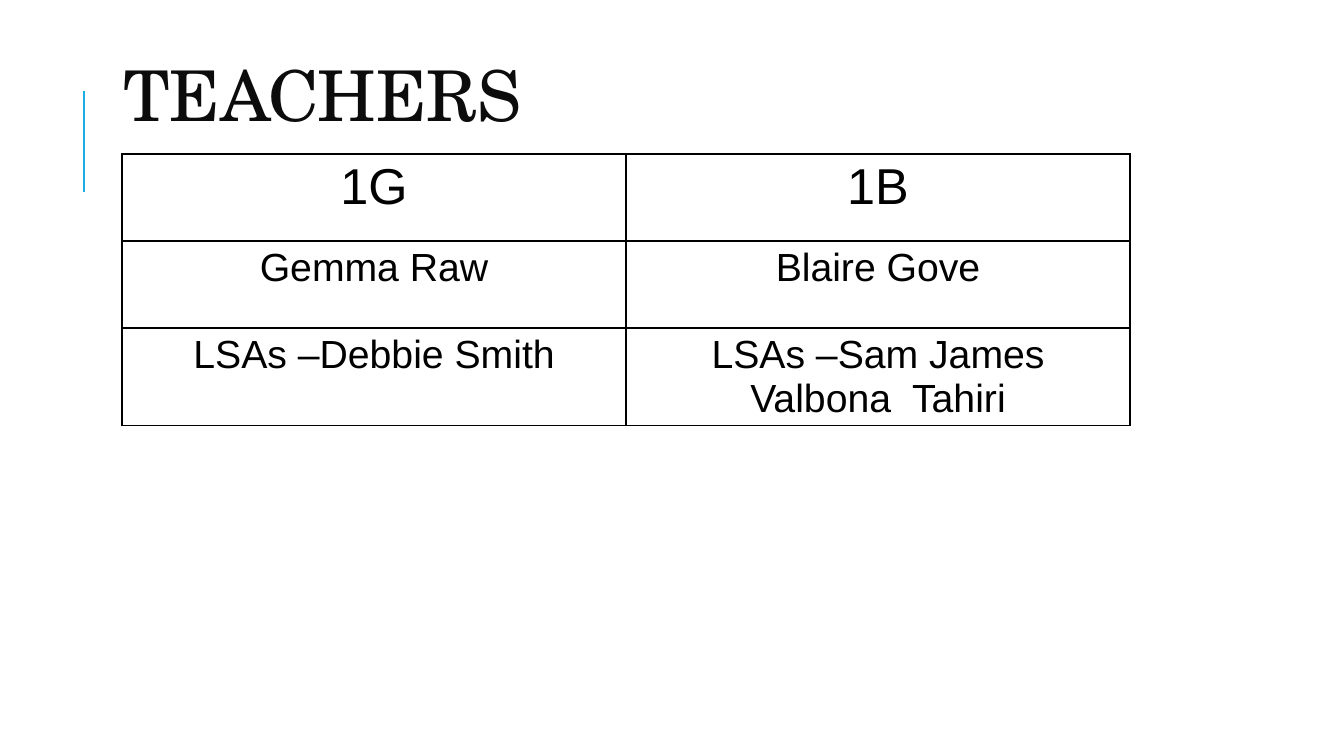
import pptx
import pptx.dml.color
import pptx.enum.shapes
import pptx.enum.text
import pptx.oxml
import pptx.oxml.ns
import pptx.util
from lxml import etree

PX = 12192000 / 1344
BLACK = pptx.dml.color.RGBColor(0x00, 0x00, 0x00)
TITLE_INK = pptx.dml.color.RGBColor(0x0C, 0x0C, 0x0C)
ACCENT_BLUE = pptx.dml.color.RGBColor(0x1C, 0xAD, 0xE4)

COLUMN_WIDTH = 504
ROW_HEIGHT = 87
LAST_ROW_HEIGHT = 97
TEACHERS = [
    ("1G", "1B"),
    ("Gemma Raw", "Blaire Gove"),
    ("LSAs –Debbie Smith", "LSAs –Sam James\nValbona  Tahiri"),
]


def px(length):
    return pptx.util.Emu(round(length * PX))


def format_text(paragraph, alignment, font_values):
    paragraph.alignment = alignment
    for run in paragraph.runs:
        run.font.color.rgb = font_values["color"]
        for name in ("name", "size", "bold"):
            setattr(run.font, name, font_values[name])


presentation = pptx.Presentation()
presentation.slide_width = px(1344)
presentation.slide_height = px(756)
slide = presentation.slides.add_slide(presentation.slide_layouts[5])

accent = slide.shapes.add_connector(
    pptx.enum.shapes.MSO_CONNECTOR.STRAIGHT, px(84), px(192), px(84), px(91)
)
accent.line.color.rgb = ACCENT_BLUE
accent.line.width = pptx.util.Pt(1.5)
etree.SubElement(accent._element.spPr, pptx.oxml.ns.qn("a:effectLst"))

title = slide.shapes.title
title_box = {"left": 113, "top": 19, "width": 1072, "height": 165}
for name, length in title_box.items():
    setattr(title, name, px(length))
title.text_frame.text = "TEACHERS"
title.text_frame.vertical_anchor = pptx.enum.text.MSO_ANCHOR.MIDDLE
title.text_frame.auto_size = pptx.enum.text.MSO_AUTO_SIZE.NONE
title_paragraph = title.text_frame.paragraphs[0]
title_paragraph.line_spacing = 0.8
format_text(
    title_paragraph,
    pptx.enum.text.PP_ALIGN.LEFT,
    {"name": "TeX Gyre Schola", "size": pptx.util.Pt(50), "bold": False, "color": TITLE_INK},
)

row_heights = [ROW_HEIGHT, ROW_HEIGHT, LAST_ROW_HEIGHT]
table = slide.shapes.add_table(
    3, 2, px(122), px(154), px(2 * COLUMN_WIDTH), px(sum(row_heights))
).table
table.first_row = False
table.horz_banding = False
for column in table.columns:
    column.width = px(COLUMN_WIDTH)
for row, height in zip(table.rows, row_heights):
    row.height = px(height)

for row_index, names in enumerate(TEACHERS):
    size = pptx.util.Pt(36 if row_index == 0 else 28)
    for column_index, text in enumerate(names):
        cell = table.cell(row_index, column_index)
        cell.text = text
        for paragraph in cell.text_frame.paragraphs:
            format_text(
                paragraph,
                pptx.enum.text.PP_ALIGN.CENTER,
                {"name": "Arial", "size": size, "bold": False, "color": BLACK},
            )
        cell_properties = cell._tc.get_or_add_tcPr()
        for side in ("lnL", "lnR", "lnT", "lnB"):
            border = etree.SubElement(
                cell_properties, pptx.oxml.ns.qn(f"a:{side}"), w=str(pptx.util.Pt(1))
            )
            border_fill = etree.SubElement(border, pptx.oxml.ns.qn("a:solidFill"))
            etree.SubElement(border_fill, pptx.oxml.ns.qn("a:srgbClr"), val=str(BLACK))
        cell.fill.background()

presentation.save("out.pptx")
